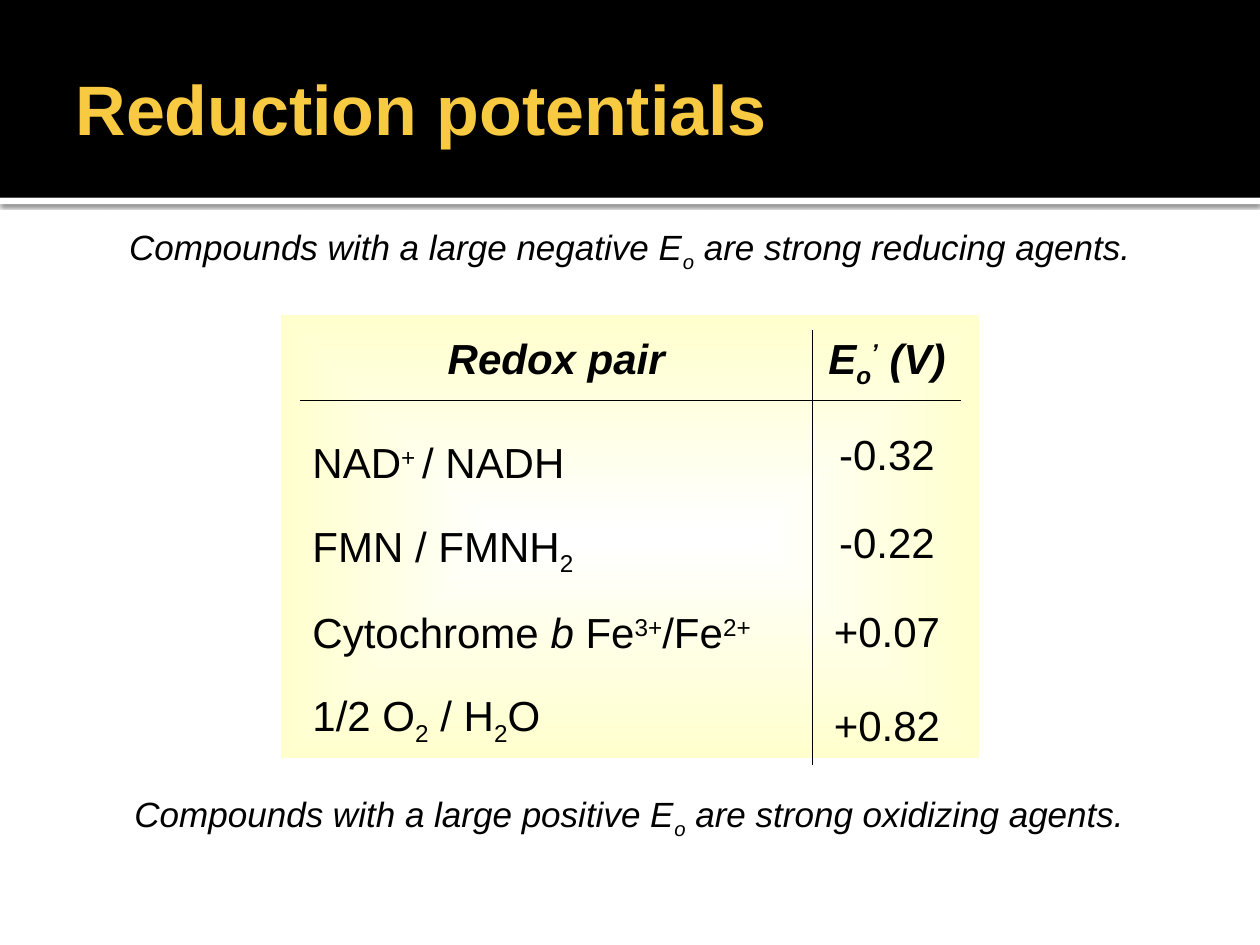
from lxml.etree import SubElement
from pptx import Presentation
from pptx.dml.color import RGBColor
from pptx.enum.shapes import MSO_SHAPE
from pptx.enum.text import MSO_ANCHOR as Anchor, PP_ALIGN as Align
from pptx.oxml.ns import qn
from pptx.util import Inches, Pt

COLORS = {"black": "000000", "white": "FFFFFF", "gold": "F7CA41", "cream": "FFFFCD"}
FONT = "Arial"
NO_TABLE_STYLE = "{2D5ABB26-0587-4C30-8999-92F81FD0307C}"
SUB, SUPER = -25, 30

# Content: each line of text is a list of (text, baseline shift, italic) runs
TITLE = "Reduction potentials"


def statement(sign, agents):
    return [(f"Compounds with a large {sign} E", 0, True), ("o", SUB, True),
            (f" are strong {agents} agents.", 0, True)]


STATEMENTS = [  # runs, box
    (statement("negative", "reducing"), (0.5, 1.74, 9, 0.62)),
    (statement("positive", "oxidizing"), (0.28, 6.24, 9.43, 0.62)),
]
HEADERS = [
    [("Redox pair", 0, True)],
    [("E", 0, True), ("o", SUB, True), ("’", SUPER, True), (" (V)", 0, True)],
]
PAIRS = [
    ([("NAD", 0, False), ("+ ", SUPER, False), ("/ NADH", 0, False)], "-0.32"),
    ([("FMN / FMNH", 0, False), ("2", SUB, False)], "-0.22"),
    ([("Cytochrome ", 0, False), ("b", 0, True), (" Fe", 0, False), ("3+", SUPER, False),
      ("/Fe", 0, False), ("2+", SUPER, False)], "+0.07"),
    ([("1/2 O", 0, False), ("2", SUB, False), (" / H", 0, False), ("2", SUB, False),
      ("O", 0, False)], "+0.82"),
]
COLUMN_WIDTHS = (4.07, 1.18)
HEADER_HEIGHT, ROW_HEIGHT = 0.53, 0.67


def color(name):
    return RGBColor.from_string(COLORS[name])


def add_runs(paragraph, runs, size, bold=False, color_name="black"):
    for text, baseline, italic in runs:
        run = paragraph.add_run()
        run.text = text
        font = run.font
        font.name, font.size, font.bold, font.italic = FONT, Pt(size), bold, italic
        font.color.rgb = color(color_name)
        if baseline:
            run._r.get_or_add_rPr().set("baseline", str(baseline * 1000))


def add_rectangle(slide, box, fill_name=None):
    shape = slide.shapes.add_shape(MSO_SHAPE.RECTANGLE, *map(Inches, box))
    shape.shadow.inherit = False
    shape.line.fill.background()
    if fill_name:
        shape.fill.solid()
        shape.fill.fore_color.rgb = color(fill_name)
    return shape


def add_drop_shadow(shape):
    effects = shape._element.spPr.find(qn("a:effectLst"))
    shadow = SubElement(effects, qn("a:outerShdw"), blurRad=str(Pt(2.5)),
                        dist=str(Pt(0.8)), dir="5400000", rotWithShape="0")
    shade = SubElement(shadow, qn("a:srgbClr"), val=COLORS["black"])
    SubElement(shade, qn("a:alpha"), val="60000")


def fill_from_center(shape, inner, outer):
    shape.fill.gradient()
    for stop, name, position in zip(shape.fill.gradient_stops, (inner, outer), (0, 1)):
        stop.color.rgb = color(name)
        stop.position = position
    gradient = shape._element.spPr.find(qn("a:gradFill"))
    gradient.remove(gradient.find(qn("a:lin")))
    center = SubElement(gradient, qn("a:path"), path="shape")
    SubElement(center, qn("a:fillToRect"), l="50000", t="50000", r="50000", b="50000")


def format_cell(cell, borders):
    properties = cell._tc.get_or_add_tcPr()
    for side in ("L", "R", "T", "B"):
        if side in borders:
            line = SubElement(properties, qn(f"a:ln{side}"), w=str(Pt(0.75)))
            fill = SubElement(line, qn("a:solidFill"))
            SubElement(fill, qn("a:srgbClr"), val=COLORS["black"])
    cell.fill.background()


def add_bands(slide):
    add_drop_shadow(add_rectangle(slide, (0, 1.57, 10, 0.05), "white"))
    add_rectangle(slide, (0, 0, 10, 1.57), "black")
    panel = add_rectangle(slide, (2.23, 2.5, 5.54, 3.52))
    fill_from_center(panel, "white", "cream")


def add_title(slide):
    title = slide.shapes.title
    title.left, title.top, title.width, title.height = map(Inches, (0.5, 0.17, 9, 1.37))
    slide.shapes._spTree.append(title._element)  # in front of the black band
    frame = title.text_frame
    frame.vertical_anchor = Anchor.MIDDLE
    frame.margin_left = Inches(0.1)
    frame.margin_right = frame.margin_top = frame.margin_bottom = Inches(0.05)
    paragraph = frame.paragraphs[0]
    paragraph.alignment = Align.LEFT
    add_runs(paragraph, [(TITLE, 0, False)], 40, True, "gold")


def add_statement(slide, runs, box):
    frame = slide.shapes.add_textbox(*map(Inches, box)).text_frame
    frame.word_wrap = True
    frame.paragraphs[0].alignment = Align.CENTER
    add_runs(frame.paragraphs[0], runs, 20)


def add_potentials(slide):
    height = HEADER_HEIGHT + ROW_HEIGHT * len(PAIRS)
    table = slide.shapes.add_table(
        len(PAIRS) + 1, 2, Inches(2.38), Inches(2.62),
        Inches(sum(COLUMN_WIDTHS)), Inches(height)).table
    table.first_row = table.horz_banding = False
    table._tbl.tblPr.find(qn("a:tableStyleId")).text = NO_TABLE_STYLE
    for column, width in zip(table.columns, COLUMN_WIDTHS):
        column.width = Inches(width)
    for index, row in enumerate(table.rows):
        row.height = Inches(ROW_HEIGHT if index else HEADER_HEIGHT)
        format_cell(row.cells[0], "R" if index else "RB")
        format_cell(row.cells[1], "L" if index else "LB")

    # Header row
    for column, runs in enumerate(HEADERS):
        paragraph = table.cell(0, column).text_frame.paragraphs[0]
        paragraph.alignment = Align.CENTER
        add_runs(paragraph, runs, 24, True)

    # All pairs share one merged cell; each potential has its own row
    pair_cell = table.cell(1, 0)
    pair_cell.merge(table.cell(len(PAIRS), 0))
    pair_cell.vertical_anchor = Anchor.MIDDLE
    for index, (pair, potential) in enumerate(PAIRS):
        frame = pair_cell.text_frame
        paragraph = frame.add_paragraph() if index else frame.paragraphs[0]
        paragraph.line_spacing = 1.5
        if index:
            paragraph.space_before = Pt(5.5)
        add_runs(paragraph, pair, 24)

        cell = table.cell(index + 1, 1)
        cell.vertical_anchor = Anchor.MIDDLE
        paragraph = cell.text_frame.paragraphs[0]
        paragraph.alignment = Align.CENTER
        paragraph.line_spacing = 1.5
        add_runs(paragraph, [(potential, 0, False)], 24)


def main():
    presentation = Presentation()
    presentation.slide_width, presentation.slide_height = Inches(10), Inches(7.5)
    slide = presentation.slides.add_slide(presentation.slide_layouts[5])
    add_bands(slide)
    add_title(slide)
    for runs, box in STATEMENTS:
        add_statement(slide, runs, box)
    add_potentials(slide)
    presentation.save("out.pptx")


if __name__ == "__main__":
    main()
